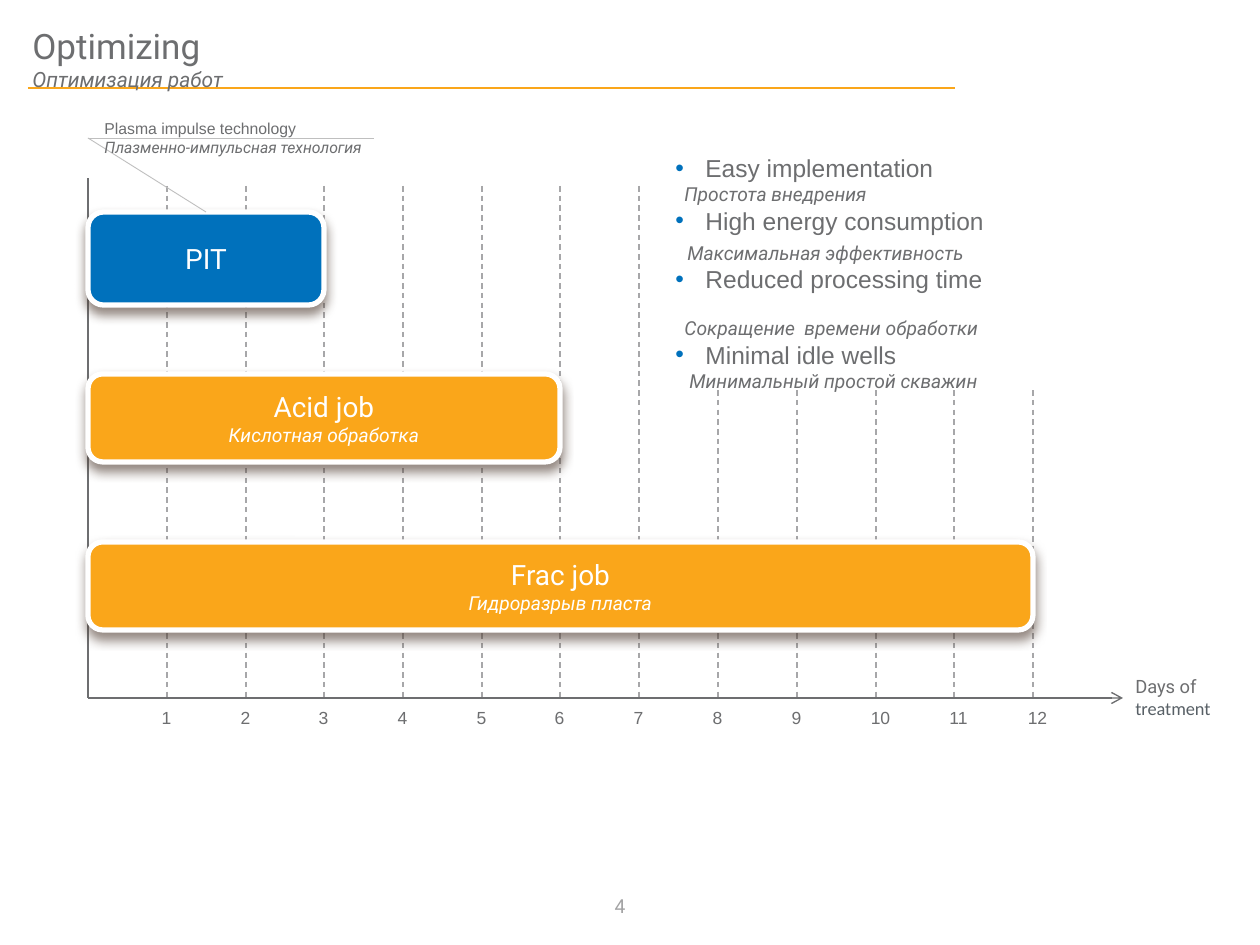
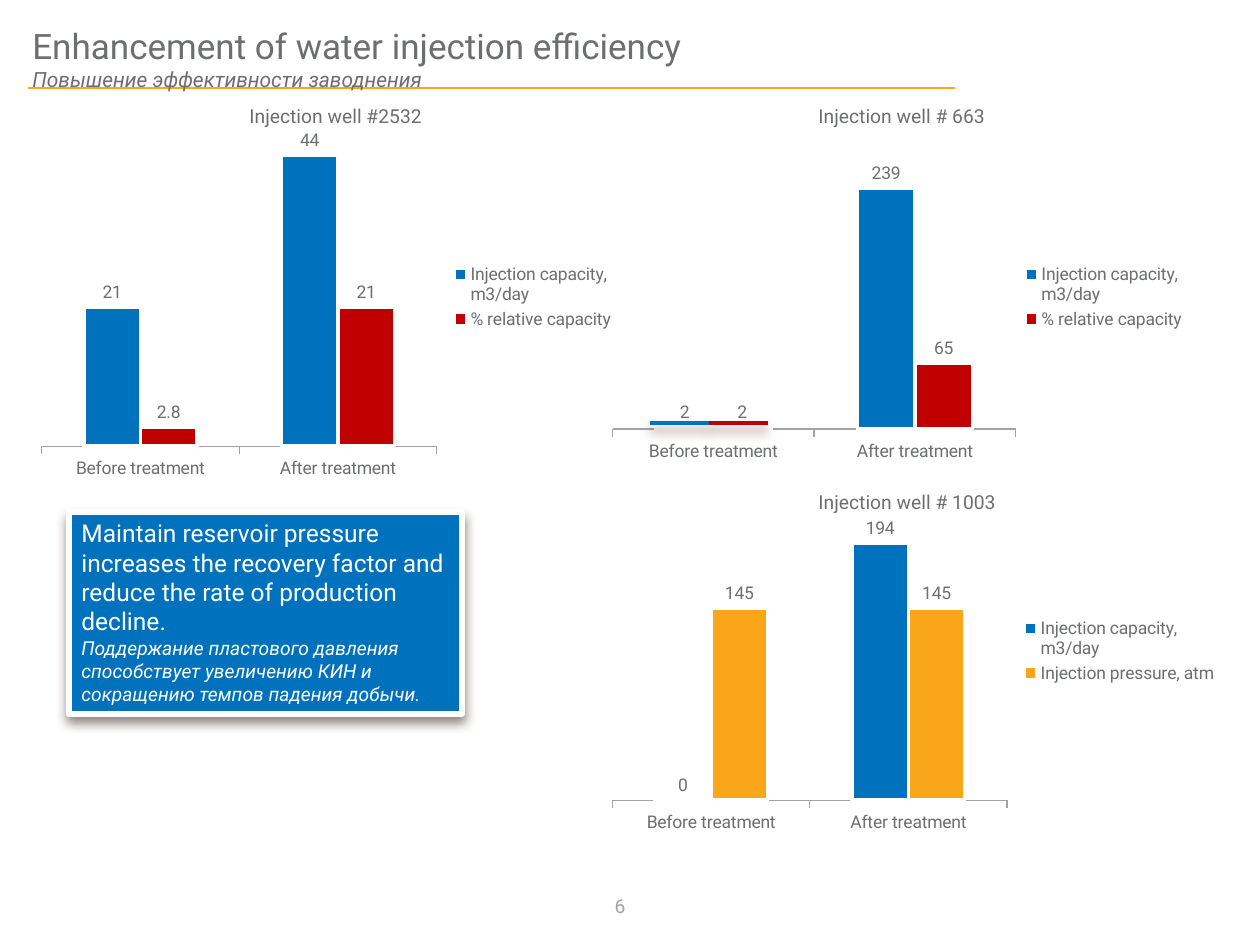
"""Builds two slides on well treatment: a time comparison and injection charts."""
from lxml import etree
from pptx import Presentation
from pptx.chart.data import CategoryChartData
from pptx.dml.color import RGBColor
from pptx.enum.chart import XL_CHART_TYPE, XL_LABEL_POSITION, XL_LEGEND_POSITION, XL_TICK_MARK
from pptx.enum.dml import MSO_LINE
from pptx.enum.shapes import MSO_CONNECTOR, MSO_SHAPE
from pptx.enum.text import MSO_ANCHOR, PP_ALIGN
from pptx.oxml import parse_xml
from pptx.oxml.ns import qn
from pptx.util import Emu, Pt

COLUMNS = XL_CHART_TYPE.COLUMN_CLUSTERED
LABEL_ABOVE = XL_LABEL_POSITION.OUTSIDE_END
LEGEND_RIGHT = XL_LEGEND_POSITION.RIGHT
TICK_OUTSIDE, TICK_NONE = XL_TICK_MARK.OUTSIDE, XL_TICK_MARK.NONE
DASH = MSO_LINE.DASH
STRAIGHT = MSO_CONNECTOR.STRAIGHT
RECTANGLE, ROUNDED = MSO_SHAPE.RECTANGLE, MSO_SHAPE.ROUNDED_RECTANGLE
TOP, MIDDLE = MSO_ANCHOR.TOP, MSO_ANCHOR.MIDDLE
LEFT, CENTER = PP_ALIGN.LEFT, PP_ALIGN.CENTER

EMU_PER_PX = 914400 / 126
COLORS = {
    "text": "6D6E70", "days": "586066", "number": "A3A3A4", "grid": "A7A7A9",
    "leader": "BFBFBF", "axis": "A3A3A4", "blue": "0071BC", "orange": "FAA61A",
    "red": "C00000", "white": "FFFFFF", "shadow": "4E3B30",
}
FORMATS = {
    "title": ("text", {"name": "Roboto", "size": Pt(20)}),
    "subtitle": ("text", {"name": "Roboto", "size": Pt(12), "italic": True}),
    "number": ("number", {"name": "Roboto", "size": Pt(11)}),
    "bar": ("white", {"name": "Roboto", "size": Pt(16)}),
    "bar_note": ("white", {"name": "Roboto", "size": Pt(11), "italic": True}),
    "message": ("white", {"name": "Roboto", "size": Pt(14)}),
    "days": ("text", {"name": "Roboto", "size": Pt(10.5)}),
    "days_end": ("days", {"name": "Calibri", "size": Pt(10.5)}),
    "tick": ("text", {"name": "Arial", "size": Pt(10)}),
    "callout": ("text", {"name": "Arial", "size": Pt(9)}),
    "callout_note": ("text", {"name": "Roboto", "size": Pt(9), "italic": True}),
    "benefit": ("text", {"name": "Arial", "size": Pt(14)}),
    "benefit_note": ("text", {"name": "Roboto", "size": Pt(11), "italic": True}),
    "chart_title": ("text", {"name": "Roboto", "size": Pt(11)}),
    "chart": ("text", {"name": "Roboto", "size": Pt(10)}),
}

AXIS_LEFT, AXIS_BOTTOM, DAY_WIDTH, DAYS = 88, 698, 78.75, 12
JOBS = [
    (3, 212, 93, "blue", [("PIT", "bar")]),
    (6, 374, 88, "orange", [("Acid job", "bar"), ("Кислотная обработка", "bar_note")]),
    (12, 542, 88, "orange", [("Frac job", "bar"), ("Гидроразрыв пласта", "bar_note")]),
]
BENEFITS = [
    ("Easy implementation", "Простота внедрения", 9, 0),
    ("High energy consumption", "Максимальная эффективность", 12, 3.5),
    ("Reduced processing time", "Сокращение  времени обработки", 9, 13),
    ("Minimal idle wells", "Минимальный простой скважин", 14, 0),
]
CAPACITY, RELATIVE = "Injection capacity, m3/day", "% relative capacity"
WELLS = [
    ("Injection well #2532", (237, 98, 203, 37), (29, 108), None,
     [(CAPACITY, (21, 44), "blue"), (RELATIVE, (2.8, 21), "red")]),
    ("Injection well # 663", (806, 98, 198, 37), (600, 108), (0.02, 0.05, 0.64, 0.8),
     [(CAPACITY, (2, 239), "blue"), (RELATIVE, (2, 65), "red")]),
    ("Injection well # 1003", (806, 484, 209, 37), (600, 462), None,
     [(CAPACITY, (0, 194), "blue"), ("Injection pressure, atm", (145, 145), "orange")]),
]


def px(length):
    """Turn pixels into EMU."""
    return Emu(round(length * EMU_PER_PX))


def rgb(name):
    """Look up a palette colour."""
    return RGBColor.from_string(COLORS[name])


def day_x(day):
    """Give the horizontal place of a day on the time axis."""
    return round(AXIS_LEFT + day * DAY_WIDTH)


def set_font(font, format_name):
    """Apply a named format to a font."""
    color, values = FORMATS[format_name]
    for name, value in values.items():
        setattr(font, name, value)
    font.color.rgb = rgb(color)


def add_span(para, text, format_name):
    """Add formatted text to a paragraph."""
    span = para.add_run()
    span.text = text
    set_font(span.font, format_name)


def next_para(frame, align=LEFT):
    """Return the empty first paragraph or a new one, aligned."""
    first = frame.paragraphs[0]
    para = first if not first.runs else frame.add_paragraph()
    para.alignment = align
    return para


def write_lines(frame, lines, align=LEFT):
    """Write each text and format pair as a paragraph."""
    for text, format_name in lines:
        add_span(next_para(frame, align), text, format_name)


def add_text(page, area, lines, align=LEFT, anchor=TOP, wrap=True):
    """Add a text box and return its frame."""
    frame = page.shapes.add_textbox(*map(px, area)).text_frame
    frame.word_wrap = wrap
    frame.vertical_anchor = anchor
    write_lines(frame, lines, align)
    return frame


def add_shadow(properties):
    """Put a soft downward shadow into shape properties."""
    effects = properties.find(qn("a:effectLst"))
    shadow = etree.SubElement(effects, qn("a:outerShdw"), blurRad=str(Pt(6)),
                              dist=str(Pt(4)), dir="5400000", rotWithShape="0")
    color = etree.SubElement(shadow, qn("a:srgbClr"), val=COLORS["shadow"])
    etree.SubElement(color, qn("a:alpha"), val="60000")


def add_box(page, kind, area, fill, anchor=TOP, framed=True):
    """Add a filled shape, framed in white with a shadow if wanted."""
    box = page.shapes.add_shape(kind, *map(px, area))
    box.shadow.inherit = False
    box.fill.solid()
    box.fill.fore_color.rgb = rgb(fill)
    if framed:
        box.line.color.rgb = rgb("white")
        box.line.width = Pt(3)
        add_shadow(box._element.spPr)
    else:
        box.line.fill.background()
    box.text_frame.word_wrap = True
    box.text_frame.vertical_anchor = anchor
    return box


def add_line(page, start, end, color, width=0.79, dash=None, arrow=False, shadow=False):
    """Add a straight line between two points."""
    line = page.shapes.add_connector(STRAIGHT, *map(px, start + end))
    line.line.color.rgb = rgb(color)
    line.line.width = Pt(width)
    if dash:
        line.line.dash_style = dash
    properties = line._element.spPr
    if arrow:
        etree.SubElement(properties.find(qn("a:ln")), qn("a:tailEnd"), type="arrow")
    etree.SubElement(properties, qn("a:effectLst"))
    if shadow:
        add_shadow(properties)
    return line


def add_page(deck, title, subtitle, number):
    """Add a slide with its rule, title and page number."""
    page = deck.slides.add_slide(deck.slide_layouts[6])
    add_line(page, (28, 88), (955, 88), "orange")
    add_text(page, (20, 39, 1211, 39), [(title, "title"), (subtitle, "subtitle")], anchor=MIDDLE)
    add_text(page, (581, 886, 78, 40), [(number, "number")], CENTER, MIDDLE)
    return page


def add_bullet(para):
    """Give a paragraph a blue hanging bullet."""
    properties = para._p.get_or_add_pPr()
    properties.set("marL", str(px(30)))
    properties.set("indent", str(-px(30)))
    color = etree.SubElement(properties, qn("a:buClr"))
    etree.SubElement(color, qn("a:srgbClr"), val=COLORS["blue"])
    etree.SubElement(properties, qn("a:buFont"), typeface="Arial")
    etree.SubElement(properties, qn("a:buChar"), char="•")


def add_benefits(page):
    """List the benefits, each with its translation below."""
    frame = add_box(page, RECTANGLE, (663, 147, 374, 239), "white", framed=False).text_frame
    for benefit, note, indent, space in BENEFITS:
        para = next_para(frame)
        add_bullet(para)
        add_span(para, benefit, "benefit")
        para = next_para(frame)
        para.space_before = Pt(space)
        para._p.get_or_add_pPr().set("marL", str(px(indent)))
        add_span(para, note, "benefit_note")


def add_time_axis(page):
    """Draw both axes, the day numbers and the axis title."""
    add_line(page, (AXIS_LEFT, AXIS_BOTTOM), (AXIS_LEFT, 178), "text")
    add_line(page, (AXIS_LEFT, AXIS_BOTTOM), (1123, AXIS_BOTTOM), "text", arrow=True)
    for day in range(1, DAYS + 1):
        width = 35 if day < 10 else 45
        add_text(page, (day_x(day) - 18, 701, width, 34), [(str(day), "tick")], CENTER, wrap=False)
    para = add_text(page, (1123, 669, 113, 59), [("Days of ", "days")]).paragraphs[0]
    add_span(para, "treatment", "days_end")


def set_plot_layout(chart, layout):
    """Fix the inner plot area as shares of the chart."""
    fields = zip("xywh", layout)
    places = "".join(f'<c:{name} val="{value}"/>' for name, value in fields)
    xml = ('<c:layout xmlns:c="http://schemas.openxmlformats.org/drawingml/2006/chart">'
           '<c:manualLayout><c:layoutTarget val="inner"/><c:xMode val="edge"/>'
           f'<c:yMode val="edge"/>{places}</c:manualLayout></c:layout>')
    plot_area = chart._chartSpace.chart.plotArea
    for old in plot_area.findall(qn("c:layout")):
        plot_area.remove(old)
    plot_area.insert(0, parse_xml(xml))


def add_column_chart(page, corner, series, layout):
    """Add a labelled column chart of the state before and after treatment."""
    data = CategoryChartData()
    data.categories = ["Before treatment", "After treatment"]
    for name, values, _ in series:
        data.add_series(name, values)
    chart = page.shapes.add_chart(COLUMNS, *map(px, corner + (630, 378)), data).chart
    set_font(chart.font, "chart")
    chart.has_title = False
    chart.has_legend = True
    chart.legend.position = LEGEND_RIGHT
    chart.legend.include_in_layout = False
    chart.value_axis.visible = False
    chart.value_axis.has_major_gridlines = False
    axis = chart.category_axis
    axis.major_tick_mark, axis.minor_tick_mark = TICK_OUTSIDE, TICK_NONE
    axis.format.line.color.rgb = rgb("axis")
    plot = chart.plots[0]
    plot.vary_by_categories = False
    plot.gap_width, plot.overlap = 150, 0
    plot.has_data_labels = True
    plot.data_labels.show_value = True
    plot.data_labels.position = LABEL_ABOVE
    for columns, (_, _, color) in zip(plot.series, series):
        columns.format.fill.solid()
        columns.format.fill.fore_color.rgb = rgb(color)
        columns.format.line.color.rgb = rgb("white")
        columns.format.line.width = Pt(2)
    if layout:
        set_plot_layout(chart, layout)


def build_timing(deck):
    """Build the slide comparing treatment times."""
    page = add_page(deck, "Optimizing", "Оптимизация работ", "4")
    for day in range(1, DAYS + 1):
        add_line(page, (day_x(day), 186), (day_x(day), AXIS_BOTTOM), "grid", dash=DASH)
    add_time_axis(page)
    bars = []
    for days, top, height, color, lines in JOBS:
        area = (AXIS_LEFT, top, day_x(days) - AXIS_LEFT, height)
        bars.append(add_box(page, ROUNDED, area, color, MIDDLE))
        write_lines(bars[-1].text_frame, lines, CENTER)
    leader = add_line(page, (206, 212), (AXIS_LEFT, 138), "leader", 0.5)
    leader.begin_connect(bars[0], 0)
    add_line(page, (374, 138), (AXIS_LEFT, 138), "leader", 0.5)
    add_text(page, (92, 113, 367, 55), [("Plasma impulse technology", "callout"),
                                        ("Плазменно-импульсная технология", "callout_note")])
    add_benefits(page)


def build_injection(deck):
    """Build the slide of injection charts."""
    page = add_page(deck, "Enhancement of water injection efficiency",
                    "Повышение эффективности заводнения", "6")
    for _, _, corner, layout, series in WELLS:
        add_column_chart(page, corner, series, layout)
    for title, area, *_ in WELLS:
        add_text(page, area, [(title, "chart_title")], wrap=False)
    message = add_box(page, RECTANGLE, (69, 512, 393, 202), "blue")
    write_lines(message.text_frame, [
        ("Maintain reservoir pressure increases the recovery factor and reduce "
         "the rate of production decline.", "message"),
        ("Поддержание пластового давления способствует увеличению КИН и "
         "сокращению темпов падения добычи.", "bar_note")])
    for left, color in ((650, "blue"), (709, "red")):
        add_line(page, (left, 423), (left + 59, 423), color, 2, shadow=True)


def main():
    """Build and save the deck."""
    deck = Presentation()
    deck.slide_width, deck.slide_height = px(1260), px(945)
    build_timing(deck)
    build_injection(deck)
    deck.save("out.pptx")


if __name__ == "__main__":
    main()
